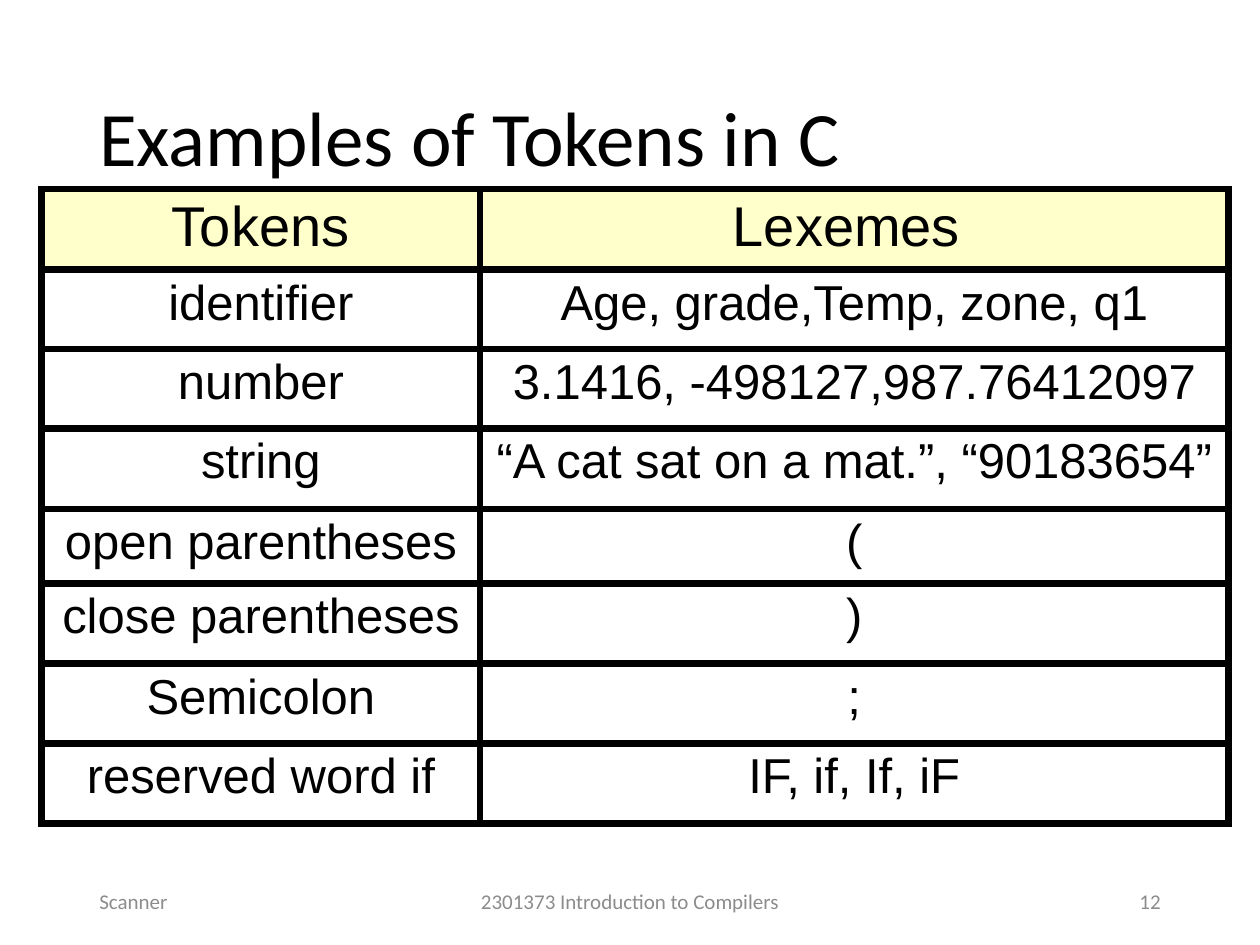
from dataclasses import dataclass

import lxml.etree
import pptx
import pptx.dml.color
import pptx.enum.text
import pptx.oxml
import pptx.oxml.ns
import pptx.util

Inches = pptx.util.Inches
ALIGN = pptx.enum.text.PP_ALIGN
ANCHOR = pptx.enum.text.MSO_ANCHOR

BLACK = "000000"
GREY = "8C8C8C"
HEADER_YELLOW = "FFFF99"
HEADER_OPACITY = 50
BORDER_POINTS = 4.5

FOOTER_TOP, FOOTER_HEIGHT = 6.95, 0.4
TABLE_LEFT, TABLE_TOP = 0.33, 1.5
COLUMN_WIDTHS = [3.48, 5.94]
ROW_HEIGHTS = [0.64, 0.63, 0.63, 0.64, 0.59, 0.64, 0.63, 0.64]
ROWS = [
    ("Tokens", "Lexemes "),
    ("identifier", "Age, grade,Temp, zone, q1"),
    ("number", "3.1416, -498127,987.76412097"),
    ("string", "“A cat sat on a mat.”, “90183654”"),
    ("open parentheses", "("),
    ("close parentheses", ")"),
    ("Semicolon", ";"),
    ("reserved word if", "IF, if, If, iF"),
]


@dataclass
class Label:
    text: str
    left: float
    top: float
    width: float
    height: float
    size: float = 12
    color: str = GREY
    align: ALIGN = ALIGN.LEFT
    line_spacing: float = 1.0


LABELS = [
    Label("Scanner", 0.69, FOOTER_TOP, 2.25, FOOTER_HEIGHT),
    Label("2301373 Introduction to Compilers", 3.31, FOOTER_TOP, 3.38, FOOTER_HEIGHT,
          align=ALIGN.CENTER),
    Label("12", 7.06, FOOTER_TOP, 2.25, FOOTER_HEIGHT, align=ALIGN.RIGHT),
    Label("Examples of Tokens in C", 0.69, 0.4, 8.62, 1.45, size=44, color=BLACK,
          line_spacing=0.9),
]


def rgb(color: str) -> pptx.dml.color.RGBColor:
    return pptx.dml.color.RGBColor.from_string(color)


def set_attributes(target, values: dict) -> None:
    for name, value in values.items():
        setattr(target, name, value)


def write_text(paragraph, text: str, font_name: str, size: float, color: str) -> None:
    run = paragraph.add_run()
    run.text = text
    set_attributes(run.font, {"name": font_name, "size": pptx.util.Pt(size)})
    run.font.color.rgb = rgb(color)


def add_label(slide, label: Label) -> None:
    shape = slide.shapes.add_textbox(Inches(label.left), Inches(label.top),
                                     Inches(label.width), Inches(label.height))
    frame = shape.text_frame
    set_attributes(frame, {"word_wrap": True, "vertical_anchor": ANCHOR.MIDDLE})
    paragraph = frame.paragraphs[0]
    set_attributes(paragraph, {"alignment": label.align, "line_spacing": label.line_spacing})
    write_text(paragraph, label.text, "Calibri", label.size, label.color)


def add_borders(cell) -> None:
    """Draw all four sides; the schema wants them ahead of the fill."""
    properties = cell._tc.get_or_add_tcPr()
    for position, side in enumerate(("lnL", "lnR", "lnT", "lnB")):
        properties.insert(position, pptx.oxml.parse_xml(
            f'<a:{side} {pptx.oxml.ns.nsdecls("a")} w="{pptx.util.Pt(BORDER_POINTS)}">'
            f'<a:solidFill><a:srgbClr val="{BLACK}"/></a:solidFill></a:{side}>'))


def fill_header(cell) -> None:
    cell.fill.solid()
    cell.fill.fore_color.rgb = rgb(HEADER_YELLOW)
    color_tag = pptx.oxml.ns.qn("a:srgbClr")
    color = cell._tc.tcPr.find(f"{pptx.oxml.ns.qn('a:solidFill')}/{color_tag}")
    alpha = lxml.etree.SubElement(color, pptx.oxml.ns.qn("a:alpha"))
    alpha.set("val", str(HEADER_OPACITY * 1000))


def add_token_table(slide) -> None:
    table = slide.shapes.add_table(
        len(ROWS), len(COLUMN_WIDTHS), Inches(TABLE_LEFT), Inches(TABLE_TOP),
        Inches(sum(COLUMN_WIDTHS)), Inches(sum(ROW_HEIGHTS))).table
    set_attributes(table, {"first_row": False, "horz_banding": False})
    for column, width in zip(table.columns, COLUMN_WIDTHS):
        column.width = Inches(width)
    for row_index, (row, height, texts) in enumerate(zip(table.rows, ROW_HEIGHTS, ROWS)):
        row.height = Inches(height)
        is_header = row_index == 0
        for cell, text in zip(row.cells, texts):
            if is_header:
                fill_header(cell)
            else:
                cell.fill.background()
            add_borders(cell)
            paragraph = cell.text_frame.paragraphs[0]
            paragraph.alignment = ALIGN.CENTER
            write_text(paragraph, text, "Arial", 32 if is_header else 28, BLACK)


def main() -> None:
    presentation = pptx.Presentation()
    set_attributes(presentation, {"slide_width": Inches(10), "slide_height": Inches(7.5)})
    slide = presentation.slides.add_slide(presentation.slide_layouts[6])
    for label in LABELS:
        add_label(slide, label)
    add_token_table(slide)
    presentation.save("out.pptx")


if __name__ == "__main__":
    main()
